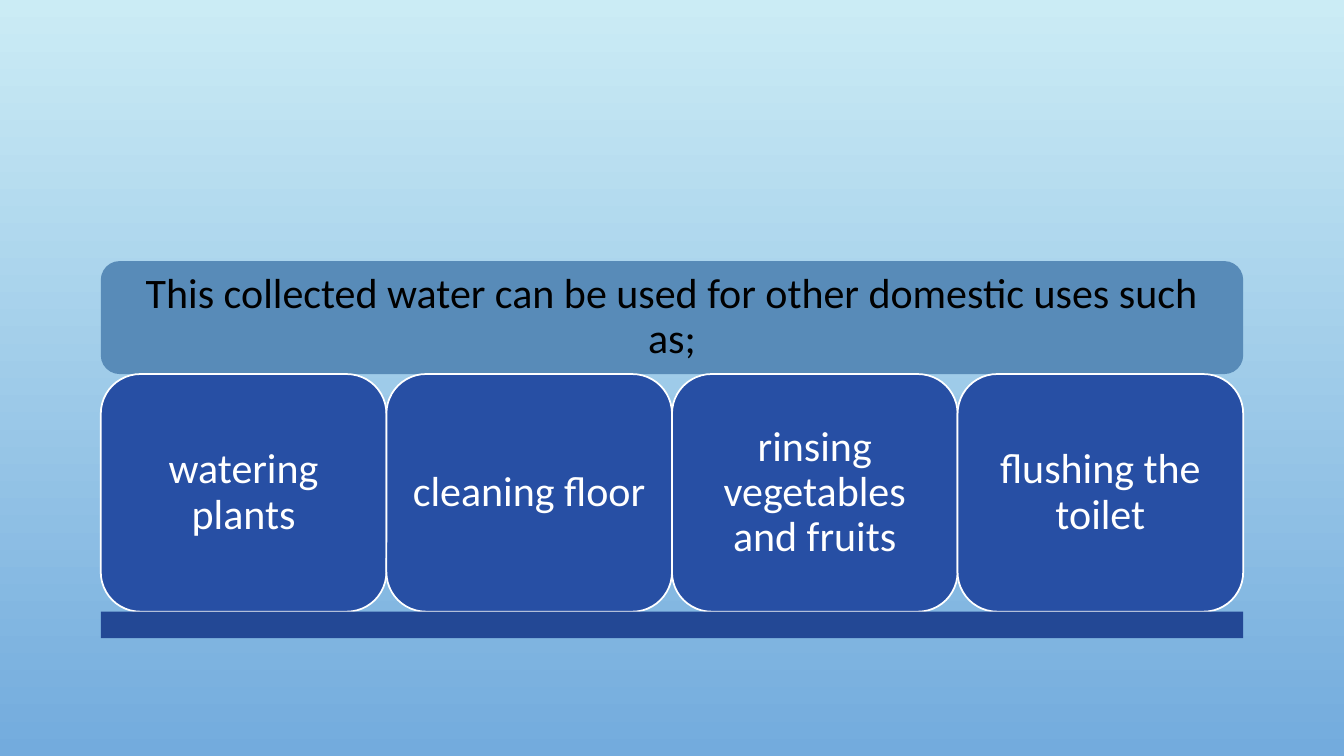
import pptx
import pptx.dml.color
import pptx.enum.shapes
import pptx.enum.text
import pptx.util

Pt = pptx.util.Pt
ROUNDED = pptx.enum.shapes.MSO_SHAPE.FLOWCHART_ALTERNATE_PROCESS
RECTANGLE = pptx.enum.shapes.MSO_SHAPE.RECTANGLE

HEADING = "This collected water can be used for other domestic uses such as;"
USES = [
    "watering plants",
    "cleaning floor",
    "rinsing vegetables and fruits",
    "flushing the toilet",
]
BACKGROUND = ["CBECF5", "73ABDD"]  # top, bottom
LEFT, TOP, WIDTH = 72, 186.5, 816
HEADING_HEIGHT, USE_HEIGHT, BASE_HEIGHT = 80.7, 169.7, 18.9
FRAME_FORMAT = {
    "word_wrap": True,
    "vertical_anchor": pptx.enum.text.MSO_ANCHOR.MIDDLE,
    "margin_left": Pt(9),
    "margin_right": Pt(9),
    "margin_top": Pt(9),
    "margin_bottom": Pt(9),
}
PARAGRAPH_FORMAT = {"alignment": pptx.enum.text.PP_ALIGN.CENTER, "line_spacing": 0.9}
FONT_FORMAT = {"name": "Calibri", "size": Pt(30)}


def rgb(value):
    return pptx.dml.color.RGBColor.from_string(value)


def apply(target, values):
    for name, value in values.items():
        setattr(target, name, value)


def add_block(slide, kind, box, fill, text="", text_color="FFFFFF", line=None):
    shape = slide.shapes.add_shape(kind, *[Pt(length) for length in box])
    shape.shadow.inherit = False
    shape.fill.solid()
    shape.fill.fore_color.rgb = rgb(fill)
    if line:
        shape.line.color.rgb = rgb(line)
        shape.line.width = Pt(1.25)
    else:
        shape.line.fill.background()
    if text:
        frame = shape.text_frame
        apply(frame, FRAME_FORMAT)
        paragraph = frame.paragraphs[0]
        apply(paragraph, PARAGRAPH_FORMAT)
        run = paragraph.add_run()
        run.text = text
        apply(run.font, FONT_FORMAT)
        run.font.color.rgb = rgb(text_color)


def main():
    presentation = pptx.Presentation()
    presentation.slide_width, presentation.slide_height = Pt(960), Pt(540)
    slide = presentation.slides.add_slide(presentation.slide_layouts[6])

    background = slide.background.fill
    background.gradient()
    background.gradient_angle = 270
    for stop, color in zip(background.gradient_stops, BACKGROUND):
        stop.color.rgb = rgb(color)

    add_block(slide, ROUNDED, (LEFT, TOP, WIDTH, HEADING_HEIGHT), "588BB8", HEADING, "000000")

    uses_top = TOP + HEADING_HEIGHT
    use_width = WIDTH / len(USES)
    for index, use in enumerate(USES):
        box = (LEFT + index * use_width, uses_top, use_width, USE_HEIGHT)
        add_block(slide, ROUNDED, box, "274FA4", use, line="FFFFFF")

    add_block(slide, RECTANGLE, (LEFT, uses_top + USE_HEIGHT, WIDTH, BASE_HEIGHT), "234895")
    presentation.save("out.pptx")


if __name__ == "__main__":
    main()
